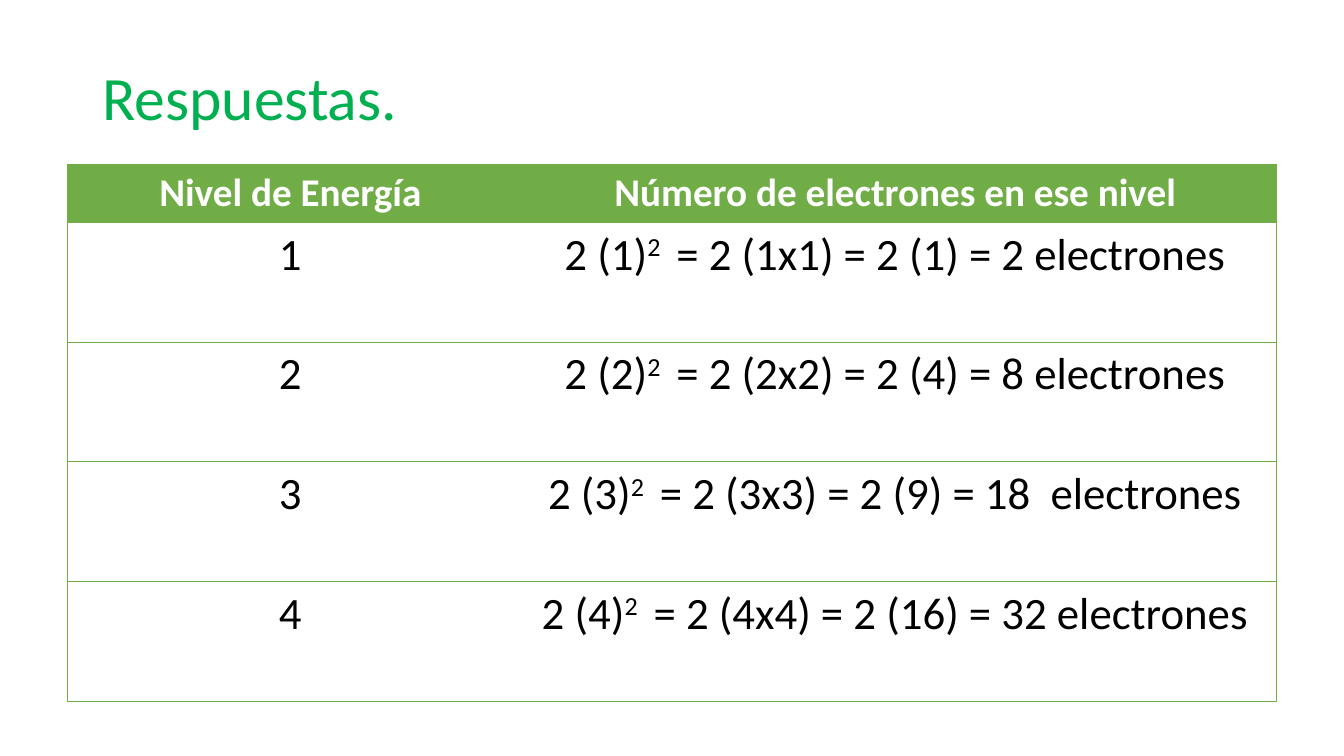
from dataclasses import dataclass

from lxml import etree
from pptx import Presentation
from pptx.dml.color import RGBColor
from pptx.enum.text import MSO_ANCHOR, PP_ALIGN
from pptx.oxml.ns import qn
from pptx.util import Pt

LEFT, CENTER = PP_ALIGN.LEFT, PP_ALIGN.CENTER
TOP, MIDDLE = MSO_ANCHOR.TOP, MSO_ANCHOR.MIDDLE
PX = 9525  # EMU per px, 96 px to the inch


@dataclass(frozen=True)
class Theme:
    font: str = "Calibri"
    title: str = "00B050"
    accent: str = "70AD47"
    light: str = "FFFFFF"
    ink: str = "000000"
    title_size: int = 44
    header_size: int = 28
    body_size: int = 32
    border: float = 0.5


def px(n):
    return n * PX


def write_text(tf, runs, *, font, size, color, bold=False, align=LEFT, spacing=None):
    """Fill the first paragraph with (text, superscript percent) runs."""
    p = tf.paragraphs[0]
    p.alignment = align
    if spacing:
        p.line_spacing = spacing
    for text, raised in runs:
        r = p.add_run()
        r.text = text
        r.font.name = font
        r.font.size = Pt(size)
        r.font.bold = bold
        r.font.color.rgb = RGBColor.from_string(color)
        if raised:
            r.font._element.set("baseline", str(raised * 1000))


class SlideBuilder:
    def __init__(self, slide, theme):
        self.slide = slide
        self.theme = theme

    def title(self, text, x, y, w, h):
        t = self.theme
        tf = self.slide.shapes.add_textbox(px(x), px(y), px(w), px(h)).text_frame
        tf.word_wrap = True
        tf.vertical_anchor = MIDDLE
        write_text(tf, [(text, 0)], font=t.font, size=t.title_size,
                   color=t.title, spacing=0.9)

    def borders(self, cell, visible):
        """Draw the sides named in visible (L, R, T, B); hide the others."""
        tc_pr = cell._tc.get_or_add_tcPr()
        for i, side in enumerate("LRTB"):
            ln = etree.Element(qn(f"a:ln{side}"), w=str(Pt(self.theme.border)))
            if side in visible:
                fill = etree.SubElement(ln, qn("a:solidFill"))
                etree.SubElement(fill, qn("a:srgbClr"), val=self.theme.accent)
            else:
                etree.SubElement(ln, qn("a:noFill"))
            tc_pr.insert(i, ln)

    def table(self, rows, x, y, widths, heights):
        t = self.theme
        table = self.slide.shapes.add_table(
            len(rows), len(widths), px(x), px(y),
            px(sum(widths)), px(sum(heights))).table
        table.first_row = table.horz_banding = False
        for column, w in zip(table.columns, widths):
            column.width = px(w)
        for row, h in zip(table.rows, heights):
            row.height = px(h)

        for i, row in enumerate(rows):
            header = i == 0
            for j, runs in enumerate(row):
                cell = table.cell(i, j)
                cell.margin_left = cell.margin_right = px(12)
                cell.margin_top = cell.margin_bottom = px(5)
                cell.vertical_anchor = TOP
                cell.fill.solid()
                cell.fill.fore_color.rgb = RGBColor.from_string(
                    t.accent if header else t.light)
                write_text(cell.text_frame, runs, font=t.font, bold=header,
                           size=t.header_size if header else t.body_size,
                           color=t.light if header else t.ink, align=CENTER)
                self.borders(cell, "TB" + ("L" if j == 0 else "")
                             + ("R" if j == len(widths) - 1 else ""))


def main():
    prs = Presentation()
    prs.slide_width, prs.slide_height = px(1280), px(720)
    slide = SlideBuilder(prs.slides.add_slide(prs.slide_layouts[6]), Theme())

    # Energy levels and their electron counts
    headings = ["Nivel de Energía", "Número de electrones en ese nivel"]
    results = ["2 (1x1) = 2 (1) = 2 electrones",
               "2 (2x2) = 2 (4) = 8 electrones",
               "2 (3x3) = 2 (9) = 18  electrones",
               "2 (4x4) = 2 (16) = 32 electrones"]
    rows = [[[(heading, 0)] for heading in headings]]
    for level, result in enumerate(results, 1):
        rows.append([[(str(level), 0)],
                     [(f"2 ({level})", 0), ("2 ", 30), (f" = {result}", 0)]])
    slide.table(rows, 64, 156, widths=[425, 727],
                heights=[55] + [114] * len(results))

    # Title
    slide.title("Respuestas.", 88, 38, 1104, 116)

    prs.save("out.pptx")


if __name__ == "__main__":
    main()
